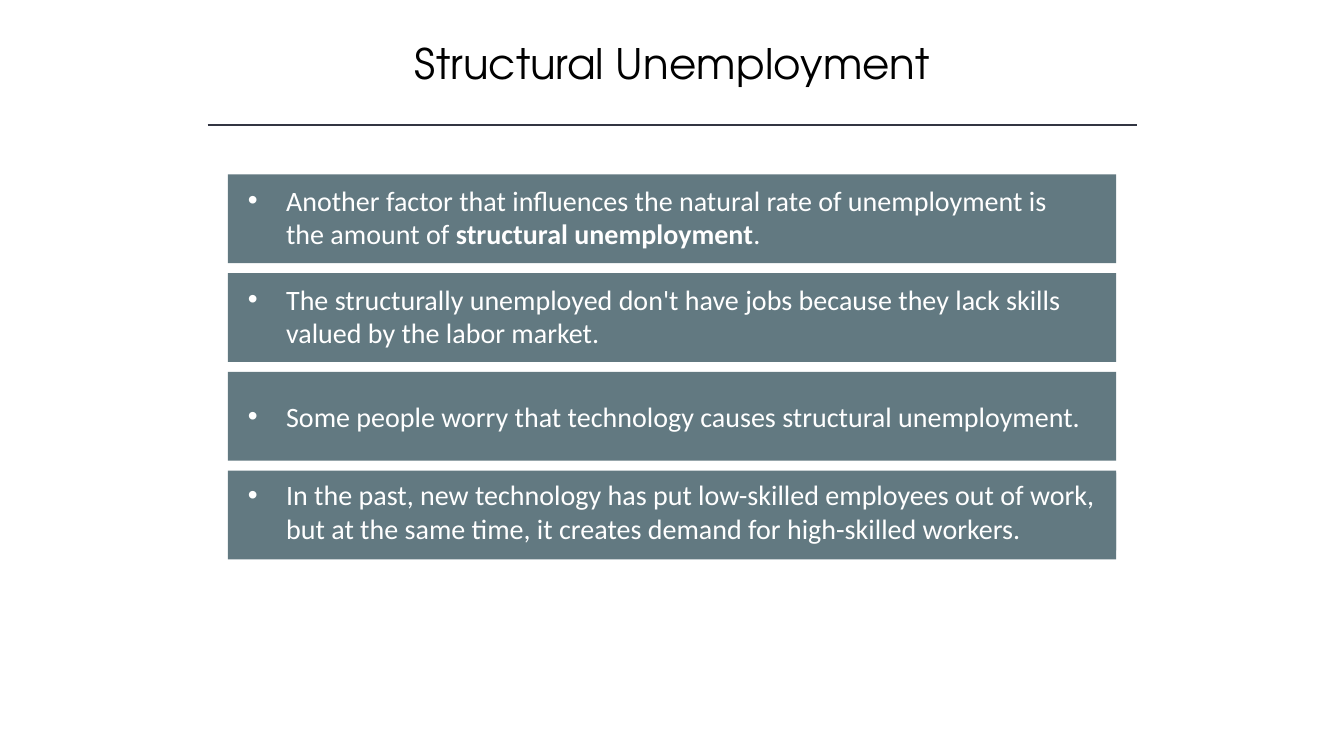
from lxml import etree
from pptx import Presentation
from pptx.dml.color import RGBColor
from pptx.enum.shapes import MSO_CONNECTOR, MSO_SHAPE
from pptx.enum.text import MSO_ANCHOR, PP_ALIGN
from pptx.oxml.ns import qn
from pptx.util import Inches, Pt

BLACK = RGBColor(0x00, 0x00, 0x00)
WHITE = RGBColor(0xFF, 0xFF, 0xFF)
SLATE = RGBColor(0x62, 0x79, 0x81)
RULE = RGBColor(0x32, 0x35, 0x42)

BAR_LEFT, BAR_TOP, BAR_WIDTH, BAR_HEIGHT = 2.26, 1.73, 8.81, 0.88
BAR_PITCH = 0.98
TEXT_LEFT = 2.36

# Each point: text top, width, height, then (wording, bold) spans.
POINTS = [
    (1.77, 8.54, 0.77, [
        ("Another factor that influences the natural rate of unemployment is the amount of ", False),
        ("structural unemployment", True),
        (".", False),
    ]),
    (2.75, 8.54, 0.77, [
        ("The structurally unemployed don't have jobs because they lack skills "
         "valued by the labor market.", False),
    ]),
    (3.91, 8.54, 0.44, [
        ("Some people worry that technology causes structural unemployment.", False),
    ]),
    (4.69, 8.71, 0.77, [
        ("In the past, new technology has put low-skilled employees out of work, "
         "but at the same time, it creates demand for high-skilled workers.", False),
    ]),
]


def set_font(para, name, size, color):
    """Set the font shared by all runs of a paragraph."""
    para.font.name = name
    para.font.size = Pt(size)
    para.font.color.rgb = color


def add_title(page, text):
    """Add the centred slide title."""
    box = page.shapes.add_textbox(Inches(1.67), Inches(0.32), Inches(10), Inches(0.61))
    box.text_frame.word_wrap = True
    para = box.text_frame.paragraphs[0]
    para.text = text
    para.alignment = PP_ALIGN.CENTER
    set_font(para, "TeX Gyre Adventor", 30, BLACK)


def add_rule(page):
    """Add the thin line below the title."""
    rule = page.shapes.add_connector(
        MSO_CONNECTOR.STRAIGHT, Inches(2.06), Inches(1.24), Inches(11.28), Inches(1.24))
    rule.line.color.rgb = RULE
    rule.line.width = Pt(1)
    etree.SubElement(rule._element.spPr, qn("a:effectLst"))


def add_panel(group, left, top, width, height):
    """Add a plain slate rectangle to a group and return it."""
    panel = group.shapes.add_shape(
        MSO_SHAPE.RECTANGLE, Inches(left), Inches(top), Inches(width), Inches(height))
    panel.shadow.inherit = False
    panel.fill.solid()
    panel.fill.fore_color.rgb = SLATE
    panel.line.fill.background()
    return panel


def add_bullet(para):
    """Give a paragraph a round bullet with a hanging indent."""
    properties = para._p.get_or_add_pPr()
    properties.set("marL", str(Inches(0.38)))
    properties.set("indent", str(Inches(-0.38)))
    etree.SubElement(properties, qn("a:buFont"), typeface="Arial")
    etree.SubElement(properties, qn("a:buChar"), char="•")


def add_point(page, bar_top, text_top, width, height, spans):
    """Add one bar with its bulleted text."""
    group = page.shapes.add_group_shape()
    add_panel(group, BAR_LEFT, bar_top, BAR_WIDTH, BAR_HEIGHT)
    frame = add_panel(group, TEXT_LEFT, text_top, width, height).text_frame
    frame.word_wrap = True
    frame.vertical_anchor = MSO_ANCHOR.TOP
    para = frame.paragraphs[0]
    para.alignment = PP_ALIGN.LEFT
    add_bullet(para)
    set_font(para, "Calibri", 20, WHITE)
    for text, bold in spans:
        span = para.add_run()
        span.text = text
        span.font.bold = bold


def main():
    """Build the slide and save it."""
    deck = Presentation()
    deck.slide_width, deck.slide_height = Inches(13.33), Inches(7.5)
    page = deck.slides.add_slide(deck.slide_layouts[6])
    add_title(page, "Structural Unemployment")
    add_rule(page)
    for index, point in enumerate(POINTS):
        add_point(page, BAR_TOP + index * BAR_PITCH, *point)
    deck.save("out.pptx")


if __name__ == "__main__":
    main()
